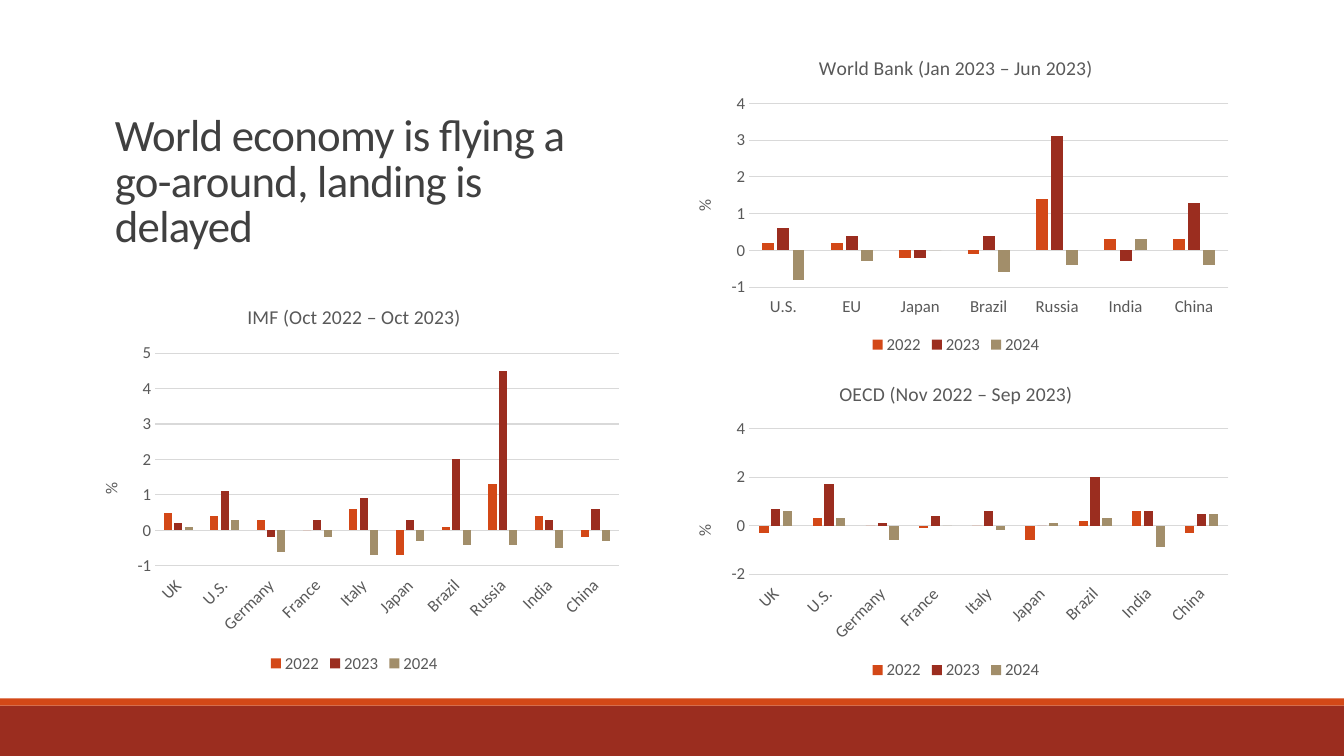
from dataclasses import dataclass

from pptx import Presentation
from pptx.chart.chart import Chart
from pptx.chart.data import CategoryChartData
from pptx.dml.color import RGBColor
from pptx.enum.chart import XL_CHART_TYPE as ChartType
from pptx.enum.chart import XL_LEGEND_POSITION as LegendPosition
from pptx.enum.chart import XL_TICK_LABEL_POSITION as LabelPosition
from pptx.enum.chart import XL_TICK_MARK as TickMark
from pptx.enum.shapes import MSO_SHAPE as Preset
from pptx.enum.text import MSO_ANCHOR as Anchor
from pptx.enum.text import PP_ALIGN as Align
from pptx.slide import Slide
from pptx.util import Cm, Pt

COLORS = {"orange": "D34817", "red": "9B2D1F", "tan": "A28E6A",
          "title": "404040", "label": "595959", "grid": "D9D9D9"}
YEARS = {"2022": "orange", "2023": "red", "2024": "tan"}
FONT = "Calibri"
SLIDE_WIDTH, SLIDE_HEIGHT = 33.87, 19.05


@dataclass
class Box:
    left: float
    top: float
    width: float
    height: float

    def emu(self) -> tuple:
        return Cm(self.left), Cm(self.top), Cm(self.width), Cm(self.height)


@dataclass
class Band:
    box: Box
    color: str


@dataclass
class Forecast:
    title: str
    box: Box
    countries: list[str]
    revisions: list[list[float]]  # one row per year
    scale: tuple[int, int, int]  # minimum, maximum, step
    number_format: str = "#,##0"
    label_angle: int = -45


BANDS = [
    Band(Box(0, 17.78, SLIDE_WIDTH, 1.27), "red"),
    Band(Box(0, 17.6, SLIDE_WIDTH, 0.18), "orange"),
]

FORECASTS = [
    Forecast(
        "IMF (Oct 2022 – Oct 2023)", Box(1.98, 7.21, 13.89, 9.86),
        ["UK", "U.S.", "Germany", "France", "Italy", "Japan", "Brazil", "Russia",
         "India", "China"],
        [[0.5, 0.4, 0.3, 0, 0.6, -0.7, 0.1, 1.3, 0.4, -0.2],
         [0.2, 1.1, -0.2, 0.3, 0.9, 0.3, 2, 4.5, 0.3, 0.6],
         [0.1, 0.3, -0.6, -0.2, -0.7, -0.3, -0.4, -0.4, -0.5, -0.3]],
        (-1, 5, 1), number_format="General"),
    Forecast(
        "World Bank (Jan 2023 – Jun 2023)", Box(16.94, 0.99, 14.3, 8.05),
        ["U.S.", "EU", "Japan", "Brazil", "Russia", "India", "China"],
        [[0.2, 0.2, -0.2, -0.1, 1.4, 0.3, 0.3],
         [0.6, 0.4, -0.2, 0.4, 3.1, -0.3, 1.3],
         [-0.8, -0.3, 0, -0.6, -0.4, 0.3, -0.4]],
        (-1, 4, 1), label_angle=0),
    Forecast(
        "OECD (Nov 2022 – Sep 2023)", Box(16.94, 9.19, 14.3, 8.05),
        ["UK", "U.S.", "Germany", "France", "Italy", "Japan", "Brazil", "India",
         "China"],
        [[-0.3, 0.3, 0, -0.1, 0, -0.6, 0.2, 0.6, -0.3],
         [0.7, 1.7, 0.1, 0.4, 0.6, 0, 2, 0.6, 0.5],
         [0.6, 0.3, -0.6, 0, -0.2, 0.1, 0.3, -0.9, 0.5]],
        (-2, 4, 2)),
]


def rgb(name: str) -> RGBColor:
    return RGBColor.from_string(COLORS[name])


def apply(target, values: dict) -> None:
    for attribute, value in values.items():
        setattr(target, attribute, value)


def style_font(font, size: float, color: str) -> None:
    apply(font, {"name": FONT, "size": Pt(size), "bold": False})
    font.color.rgb = rgb(color)


def write_title(slide: Slide, wording: str, box: Box) -> None:
    heading = slide.shapes.title
    left, top, width, height = box.emu()
    apply(heading, {"left": left, "top": top, "width": width, "height": height})
    frame = heading.text_frame
    apply(frame, {"text": wording, "word_wrap": True, "vertical_anchor": Anchor.BOTTOM})
    paragraph = frame.paragraphs[0]
    apply(paragraph, {"alignment": Align.LEFT, "line_spacing": 0.85})
    run = paragraph.runs[0]
    style_font(run.font, 32, "title")
    run.font.element.set("spc", "-50") if hasattr(run.font, "element") else \
        run._r.get_or_add_rPr().set("spc", "-50")


def draw_band(slide: Slide, band: Band) -> None:
    strip = slide.shapes.add_shape(Preset.RECTANGLE, *band.box.emu())
    strip.shadow.inherit = False
    strip.fill.solid()
    strip.fill.fore_color.rgb = rgb(band.color)
    strip.line.fill.background()


def write_caption(titled, wording: str, size: float) -> None:
    """Set the title of a chart or of an axis."""
    titled.has_title = True
    caption = titled.chart_title if isinstance(titled, Chart) else titled.axis_title
    caption.text_frame.text = wording
    style_font(caption.text_frame.paragraphs[0].runs[0].font, size, "label")


def rotate_text(chart: Chart, body_path: str, degrees: int) -> None:
    for body in chart.element.xpath(body_path):
        body.set("rot", str(degrees * 60000))
        body.set("vert", "horz")


def draw_forecast(slide: Slide, forecast: Forecast) -> None:
    figures = CategoryChartData(number_format="General")
    figures.categories = forecast.countries
    for year, values in zip(YEARS, forecast.revisions):
        figures.add_series(year, values)
    chart = slide.shapes.add_chart(
        ChartType.COLUMN_CLUSTERED, *forecast.box.emu(), figures).chart
    style_font(chart.font, 12, "label")
    write_caption(chart, forecast.title, 14)
    chart.chart_title.include_in_layout = False

    # Columns
    columns = chart.plots[0]
    apply(columns, {"gap_width": 219, "overlap": -27, "vary_by_categories": False})
    for series, color in zip(columns.series, YEARS.values()):
        series.invert_if_negative = False
        series.format.fill.solid()
        series.format.fill.fore_color.rgb = rgb(color)

    # Axes
    countries, percent = chart.category_axis, chart.value_axis
    for axis in (countries, percent):
        apply(axis, {"major_tick_mark": TickMark.NONE, "minor_tick_mark": TickMark.NONE})
        style_font(axis.tick_labels.font, 12, "label")
    countries.tick_label_position = LabelPosition.LOW
    low, high, step = forecast.scale
    apply(percent, {"minimum_scale": low, "maximum_scale": high, "major_unit": step,
                    "has_major_gridlines": True})
    apply(percent.tick_labels, {"number_format": forecast.number_format,
                                "number_format_is_linked": False})
    percent.format.line.fill.background()
    for line in (countries.format.line, percent.major_gridlines.format.line):
        line.color.rgb = rgb("grid")
        line.width = Pt(0.75)
    write_caption(percent, "%", 12)
    rotate_text(chart, ".//c:catAx/c:txPr/a:bodyPr", forecast.label_angle)
    rotate_text(chart, ".//c:valAx/c:title//a:bodyPr", -90)

    # Legend
    chart.has_legend = True
    apply(chart.legend, {"position": LegendPosition.BOTTOM, "include_in_layout": False})
    style_font(chart.legend.font, 12, "label")


def main() -> None:
    deck = Presentation()
    apply(deck, {"slide_width": Cm(SLIDE_WIDTH), "slide_height": Cm(SLIDE_HEIGHT)})
    slide = deck.slides.add_slide(deck.slide_layouts[5])
    for band in BANDS:
        draw_band(slide, band)
    write_title(slide, "World economy is flying a go-around, landing is delayed",
                Box(2.64, 1.98, 13.23, 4.5))
    for forecast in FORECASTS:
        draw_forecast(slide, forecast)
    deck.save("out.pptx")


if __name__ == "__main__":
    main()
